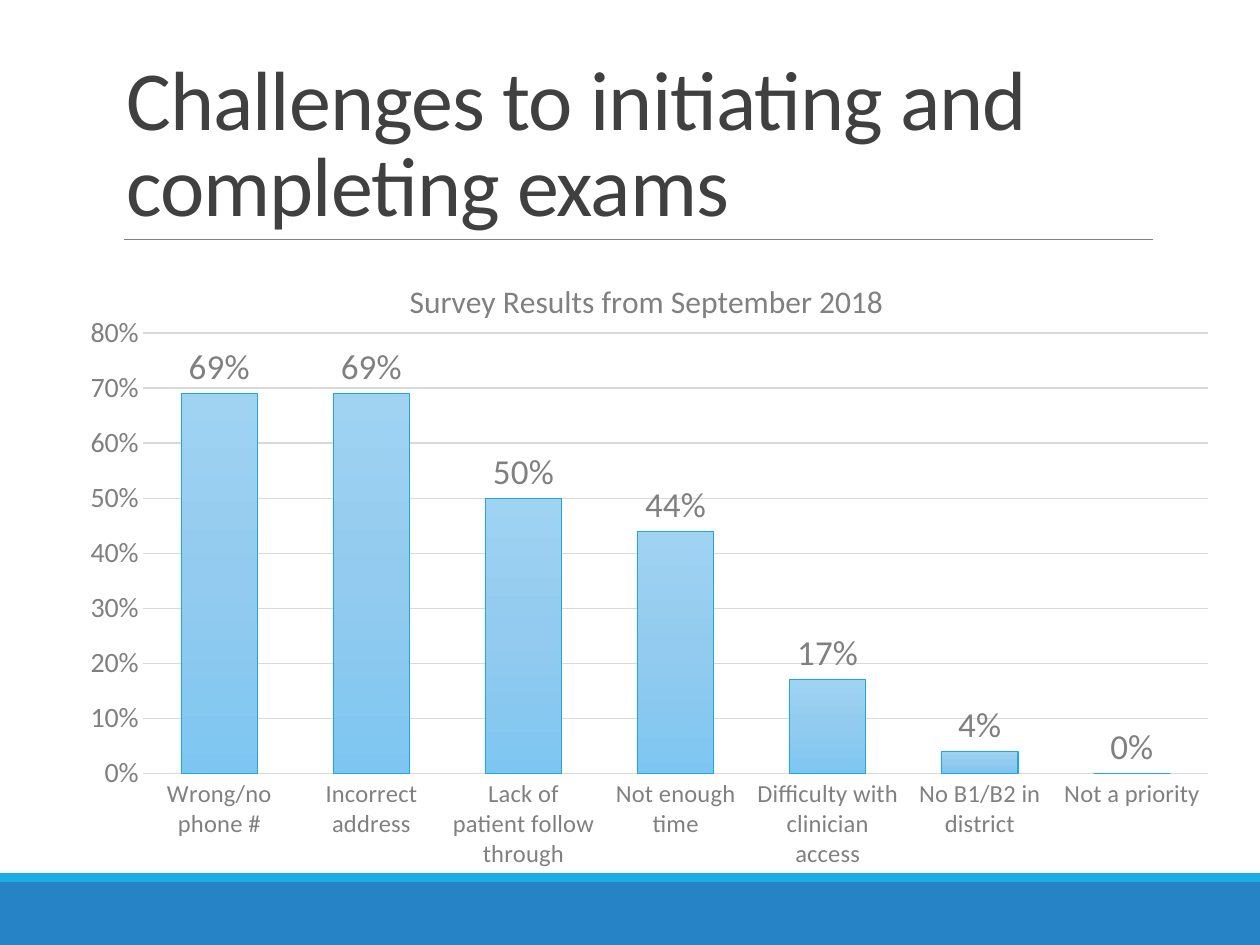
import copy

import pptx
import pptx.chart.data
import pptx.dml.color
import pptx.enum.chart
import pptx.enum.shapes
import pptx.enum.text
import pptx.oxml
import pptx.oxml.ns
import pptx.util
from pptx.util import Cm, Pt

GREY, RULE = "808080", "D9D9D9"
RESULTS = {
    "Wrong/no phone #": 0.69,
    "Incorrect address": 0.69,
    "Lack of patient follow through": 0.5,
    "Not enough time": 0.44,
    "Difficulty with clinician access": 0.17,
    "No B1/B2 in district": 0.04,
    "Not a priority": 0,
}


def color(code):
    return pptx.dml.color.RGBColor.from_string(code)


class Deck:
    """Hold the style and the current slide, and draw each kind of element."""

    face = "Calibri"

    def __init__(self):
        self.prs = pptx.Presentation()
        self.prs.slide_width, self.prs.slide_height = Cm(25.4), Cm(19.05)
        self.slide = self.prs.slides.add_slide(self.prs.slide_layouts[5])

    def style(self, font, size, code):
        font.name, font.size = self.face, Pt(size)
        font.bold = False
        font.color.rgb = color(code)

    def stroke(self, line, code, width):
        line.color.rgb = color(code)
        line.width = Pt(width)

    def title(self, text, left, top, width, height):
        shape = self.slide.shapes.title
        shape.left, shape.top = Cm(left), Cm(top)
        shape.width, shape.height = Cm(width), Cm(height)
        frame = shape.text_frame
        frame.text = text
        frame.word_wrap = True
        frame.auto_size = pptx.enum.text.MSO_AUTO_SIZE.NONE
        frame.vertical_anchor = pptx.enum.text.MSO_ANCHOR.BOTTOM
        para = frame.paragraphs[0]
        para.alignment = pptx.enum.text.PP_ALIGN.LEFT
        para.line_spacing = 0.85
        self.style(para.font, 48, "404040")
        para.runs[0].font._element.set("spc", "-50")

    def band(self, top, height, code):
        shape = self.slide.shapes.add_shape(
            pptx.enum.shapes.MSO_SHAPE.RECTANGLE,
            0, Cm(top), self.prs.slide_width, Cm(height))
        shape.shadow.inherit = False
        shape.fill.solid()
        shape.fill.fore_color.rgb = color(code)
        shape.line.fill.background()

    def rule(self, left, right, top):
        line = self.slide.shapes.add_connector(
            pptx.enum.shapes.MSO_CONNECTOR.STRAIGHT,
            Cm(left), Cm(top), Cm(right), Cm(top))
        self.stroke(line.line, GREY, 0.5)
        props = line._element.spPr
        props.append(pptx.oxml.parse_xml(
            f"<a:effectLst {pptx.oxml.ns.nsdecls('a')}/>"))

    def chart(self, head, data, left, top, width, height):
        kinds = pptx.enum.chart
        feed = pptx.chart.data.CategoryChartData(number_format="0%")
        feed.categories = list(data)
        feed.add_series("Series 1", list(data.values()))
        chart = self.slide.shapes.add_chart(
            kinds.XL_CHART_TYPE.COLUMN_CLUSTERED,
            Cm(left), Cm(top), Cm(width), Cm(height), feed).chart
        self.style(chart.font, 10, "000000")
        chart.has_legend = False
        chart.has_title = True
        chart.chart_title.include_in_layout = False
        frame = chart.chart_title.text_frame
        frame.text = head
        self.style(frame.paragraphs[0].font, 18, GREY)

        cats, vals = chart.category_axis, chart.value_axis
        for axis, size in ((cats, 14), (vals, 16)):
            axis.major_tick_mark = kinds.XL_TICK_MARK.NONE
            axis.minor_tick_mark = kinds.XL_TICK_MARK.NONE
            self.style(axis.tick_labels.font, size, GREY)
        self.stroke(cats.format.line, RULE, 0.75)
        vals.format.line.fill.background()
        self.stroke(vals.major_gridlines.format.line, RULE, 0.75)
        vals.minimum_scale, vals.maximum_scale = 0, 0.8
        vals.major_unit = 0.1
        vals.tick_labels.number_format = "0%"
        vals.tick_labels.number_format_is_linked = False

        plot = chart.plots[0]
        plot.gap_width, plot.overlap = 100, -24
        plot.vary_by_categories = False
        plot.has_data_labels = True
        tags = plot.data_labels
        tags.show_value = True
        tags.position = kinds.XL_LABEL_POSITION.OUTSIDE_END
        tags.number_format = "0%"
        tags.number_format_is_linked = False
        self.style(tags.font, 20, GREY)
        bars = plot.series[0]
        self.shade(bars, ("A0D3F2", "92CBEF", "7EC6F1"))
        self.stroke(bars.format.line, "1BA9DF", 0.75)
        self.place(chart, x=0.076, y=0.121, w=0.897, h=0.679)

    def shade(self, bars, codes):
        fill = bars.format.fill
        fill.gradient()
        fill.gradient_angle = 270
        stops = bars._element.find(".//" + pptx.oxml.ns.qn("a:gsLst"))
        stops.insert(1, copy.deepcopy(stops[0]))
        for i, (stop, code) in enumerate(zip(fill.gradient_stops, codes)):
            stop.position = i / (len(codes) - 1)
            stop.color.rgb = color(code)

    def place(self, chart, **box):
        area = chart._chartSpace.chart.plotArea
        for old in area.findall(pptx.oxml.ns.qn("c:layout")):
            area.remove(old)
        modes = "".join(f'<c:{k}Mode val="edge"/>' for k in "xy")
        sizes = "".join(f'<c:{k} val="{v}"/>' for k, v in box.items())
        area.insert(0, pptx.oxml.parse_xml(
            f"<c:layout {pptx.oxml.ns.nsdecls('c')}><c:manualLayout>"
            f'<c:layoutTarget val="inner"/>{modes}{sizes}'
            "</c:manualLayout></c:layout>"))


def main():
    deck = Deck()
    deck.band(17.78, 1.27, "2683C6")
    deck.band(17.6, 0.18, "1CADE4")
    deck.rule(2.49, 23.24, 4.83)
    deck.title("Challenges to initiating and completing exams",
               2.29, 0.79, 20.96, 4.04)
    deck.chart("Survey Results from September 2018", RESULTS,
               1.07, 5.13, 23.93, 13.08)
    deck.prs.save("out.pptx")


if __name__ == "__main__":
    main()
